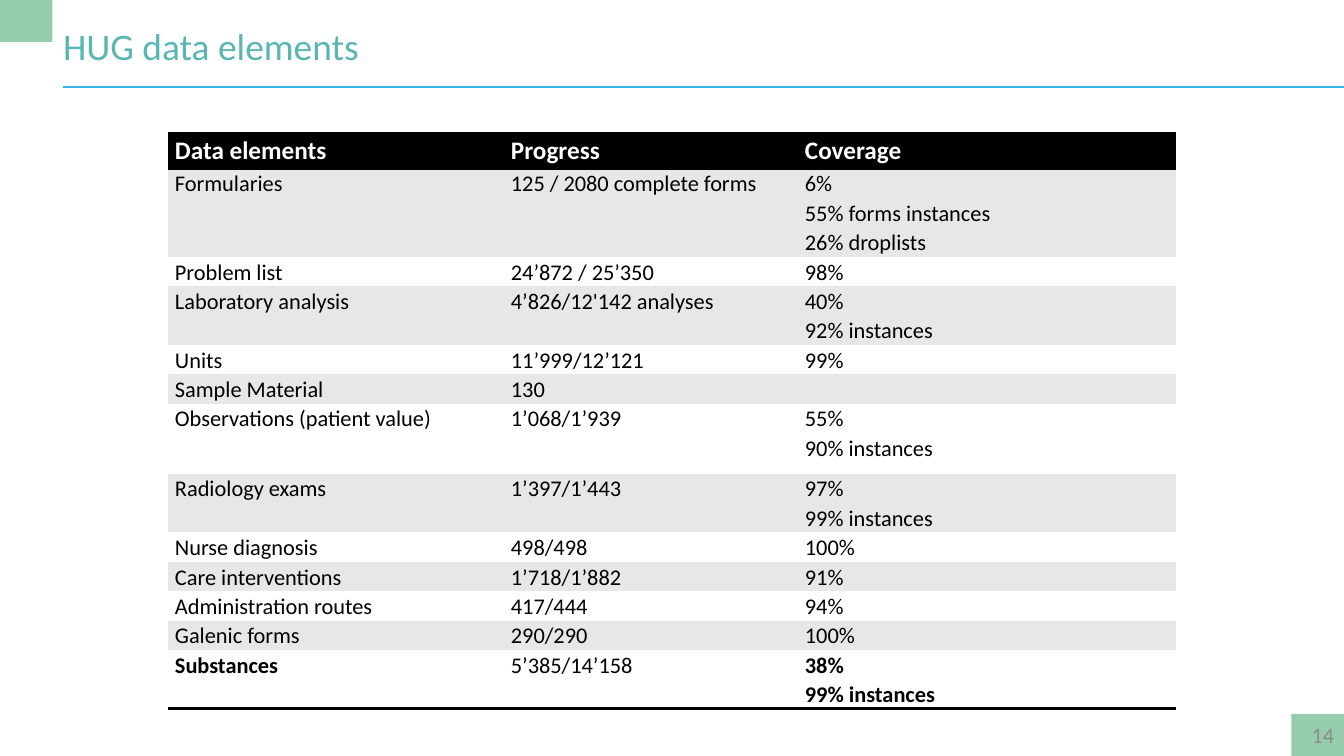
from lxml.etree import SubElement
from pptx import Presentation
from pptx.dml.color import RGBColor
from pptx.enum.shapes import MSO_CONNECTOR as CONN, MSO_SHAPE as SHAPE
from pptx.enum.text import MSO_ANCHOR as ANCHOR, MSO_AUTO_SIZE as AUTO, PP_ALIGN as ALIGN
from pptx.oxml.ns import qn
from pptx.util import Pt

WIDTH, HEIGHT = 960, 540
NO_STYLE = "{2D5ABB26-0587-4C30-8999-92F81FD0307C}"
LINE_HEIGHT = 21

HEADER = ("Data elements", "Progress", "Coverage")
# A line break inside a paragraph is \v, a new paragraph is \n.
ROWS = [
    ("Formularies", "125 / 2080 complete forms", "6% \v55% forms instances\n26% droplists"),
    ("Problem list", "24’872 / 25’350", "98%"),
    ("Laboratory analysis", "4’826/12'142 analyses", "40%\n92% instances"),
    ("Units", "11’999/12’121", "99%"),
    ("Sample Material", "130", ""),
    ("Observations (patient value)", "1’068/1’939", "55%\n90% instances"),
    ("Radiology exams", "1’397/1’443", "97%\n99% instances"),
    ("Nurse diagnosis", "498/498", "100%"),
    ("Care interventions", "1’718/1’882", "91%"),
    ("Administration routes", "417/444", "94%"),
    ("Galenic forms", "290/290", "100%"),
    ("Substances", "5’385/14’158", "38%\n99% instances"),
]
EXTRA_HEIGHT = {"Observations (patient value)": 8}


def rgb(color):
    return RGBColor.from_string(color)


class Deck:
    font, green, teal, blue = "Calibri", "94CCAC", "59B6B3", "34B4E5"
    black, white, band, gray = "000000", "FFFFFF", "E7E7E7", "8C8C8C"

    def __init__(self):
        self.prs = Presentation()
        self.prs.slide_width, self.prs.slide_height = Pt(WIDTH), Pt(HEIGHT)
        self.s = self.prs.slides.add_slide(self.prs.slide_layouts[5])

    def style(self, p, size, color, bold=False):
        f = p.font
        f.name, f.size, f.bold = self.font, Pt(size), bold
        f.color.rgb = rgb(color)

    def title(self, text, x, y, w, h):
        sp = self.s.shapes.title
        sp.left, sp.top, sp.width, sp.height = map(Pt, (x, y, w, h))
        tf = sp.text_frame
        tf.margin_left = tf.margin_right = tf.margin_top = tf.margin_bottom = 0
        tf.auto_size, tf.vertical_anchor = AUTO.NONE, ANCHOR.TOP
        tf.text = text
        p = tf.paragraphs[0]
        p.alignment = ALIGN.LEFT
        self.style(p, 26.7, self.teal)

    def block(self, x, y, w, h):
        sp = self.s.shapes.add_shape(SHAPE.RECTANGLE, *map(Pt, (x, y, w, h)))
        sp.shadow.inherit = False
        sp.fill.solid()
        sp.fill.fore_color.rgb = rgb(self.green)
        sp.line.fill.background()

    def rule(self, x1, x2, y):
        line = self.s.shapes.add_connector(CONN.STRAIGHT, *map(Pt, (x1, y, x2, y)))
        line.line.color.rgb = rgb(self.blue)
        line.line.width = Pt(1.42)
        SubElement(line._element.spPr, qn("a:effectLst"))

    def page_number(self, text, x, y, w, h):
        tf = self.s.shapes.add_textbox(*map(Pt, (x, y, w, h))).text_frame
        tf.word_wrap, tf.vertical_anchor = True, ANCHOR.MIDDLE
        tf.text = text
        p = tf.paragraphs[0]
        p.alignment = ALIGN.RIGHT
        self.style(p, 15.8, self.gray)

    def border(self, cell, side):
        ln = SubElement(cell._tc.get_or_add_tcPr(), qn(f"a:ln{side}"), w=str(Pt(2)))
        SubElement(SubElement(ln, qn("a:solidFill")), qn("a:srgbClr"), val=self.black)

    def cell(self, cell, text, fill, size, color, bold, sides):
        for side in sides:
            self.border(cell, side)
        cell.fill.solid()
        cell.fill.fore_color.rgb = rgb(fill)
        cell.margin_left = cell.margin_right = Pt(5)
        cell.margin_top = cell.margin_bottom = 0
        cell.text = text
        for p in cell.text_frame.paragraphs:
            p.line_spacing = 1.07
            self.style(p, size, color, bold)

    def table(self, x, y, col_widths, header, rows):
        heights = [25] + [LINE_HEIGHT * len(row[-1].splitlines() or [""])
                          + EXTRA_HEIGHT.get(row[0], 0) for row in rows]
        frame = self.s.shapes.add_table(len(heights), len(col_widths), Pt(x), Pt(y),
                                        Pt(sum(col_widths)), Pt(sum(heights)))
        table = frame.table
        table.horz_banding = False
        table._tbl.tblPr.find(qn("a:tableStyleId")).text = NO_STYLE
        for column, width in zip(table.columns, col_widths):
            column.width = Pt(width)
        for i, (row, height) in enumerate(zip([header, *rows], heights)):
            table.rows[i].height = Pt(height)
            last = i == len(rows)
            for j, text in enumerate(row):
                cell = table.cell(i, j)
                if i == 0:
                    self.cell(cell, text, self.black, 18, self.white, True, "TB")
                else:
                    fill = self.band if i % 2 else self.white
                    self.cell(cell, text, fill, 16, self.black, last and j != 1,
                              "B" if last else "")


def main():
    deck = Deck()
    deck.block(WIDTH - 37.5, HEIGHT - 30, 37.5, 30)
    deck.block(0, 0, 37.5, 30)
    deck.rule(45, WIDTH, 62.5)
    deck.title("HUG data elements", 45, 16.5, 850, 32.5)
    deck.page_number("14", 860.5, 510.5, 99.5, 29)
    deck.table(120, 95.5, (240, 210, 270), HEADER, ROWS)
    deck.prs.save("out.pptx")


if __name__ == "__main__":
    main()
